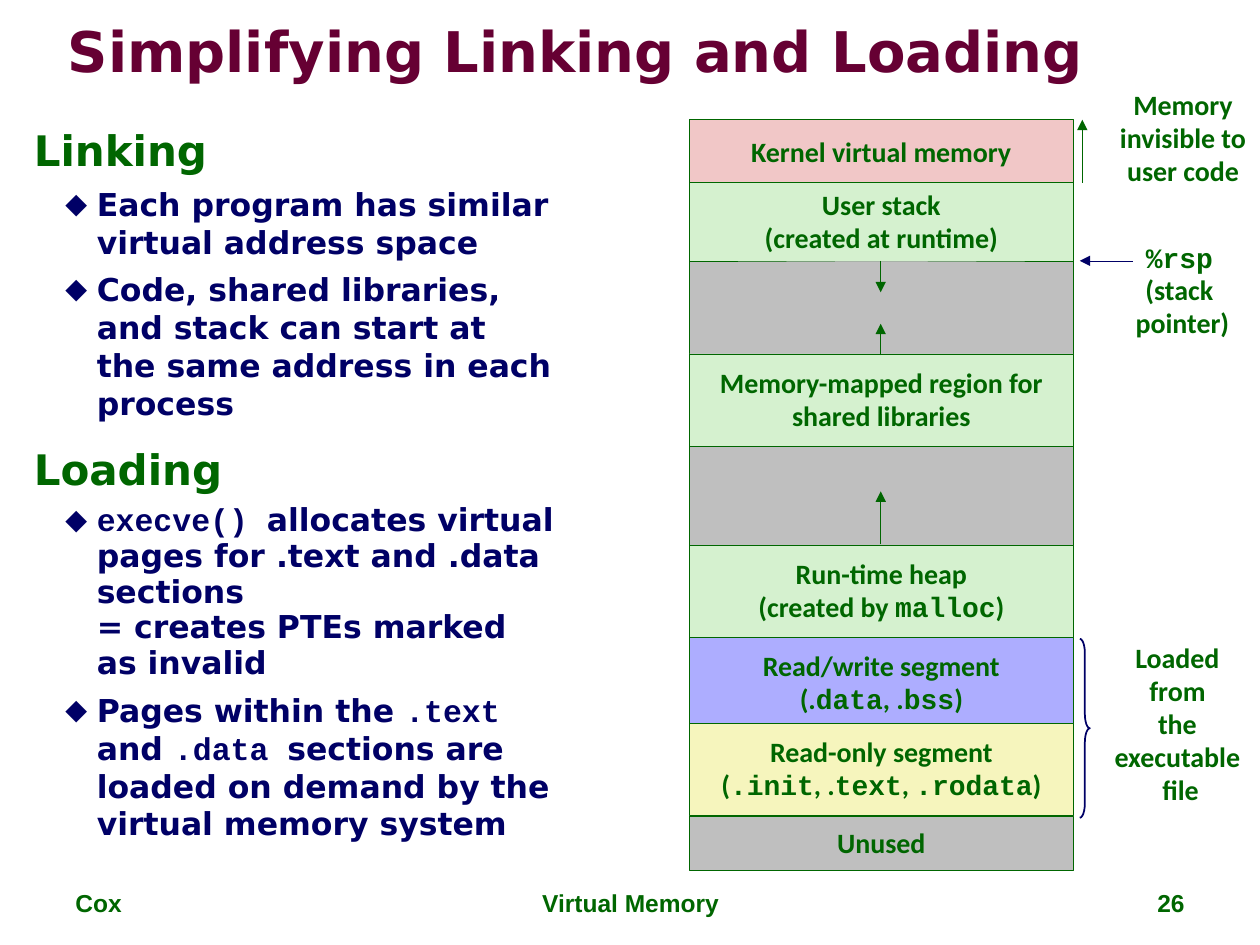
from pptx import Presentation
from pptx.dml.color import RGBColor
from pptx.enum.shapes import MSO_CONNECTOR, MSO_SHAPE
from pptx.enum.text import MSO_ANCHOR, PP_ALIGN
from pptx.oxml.ns import qn
from pptx.util import Inches, Pt
from lxml.etree import SubElement

HUES = {
    "title": "660033", "green": "006600", "navy": "000066",
    "pink": "F1C7C7", "mint": "D5F1CF", "gray": "BFBFBF",
    "blue": "ADADFF", "cream": "F6F5BD",
}
LEFT, WIDE = 5.47, 3.05
MID = 6.99

BLOCKS = [
    (1.82, 0.99, "gray", []),
    (3.54, 0.79, "gray", []),
    (6.48, 0.43, "gray", ["Unused"]),
    (0.95, 0.53, "pink", ["Kernel virtual memory"]),
    (1.45, 0.62, "mint", ["User stack", "(created at runtime)"]),
    (2.81, 0.73, "mint", ["Memory-mapped region for", "shared libraries"]),
    (4.33, 0.73, "mint", ["Run-time heap", "(created by `malloc`)"]),
    (5.06, 0.73, "blue", ["Read/write segment", "(.`data`, .`bss`)"]),
    (5.74, 0.73, "cream",
     ["Read-only segment", "(`.init`, .`text`, `.rodata`)"]),
]
ARROWS = [
    (MID, 4.32, MID, 3.9, "green"),
    (MID, 2.82, MID, 2.57, "green"),
    (MID, 2.07, MID, 2.32, "green"),
    (8.59, 1.45, 8.59, 0.95, "green"),
    (8.99, 2.07, 8.57, 2.07, "navy"),
]
NOTES = [
    (8.76, 0.66, 1.26, 0.9, ["Memory", "invisible to", "user code"]),
    (8.91, 1.88, 0.95, 0.88, ["`%rsp` ", "(stack ", "pointer)"]),
    (8.74, 5.05, 1.26, 1.42,
     ["Loaded ", "from ", "the ", "executable ", "file"]),
]
TOPICS = [
    ("Linking", [
        ("Each program has similar virtual address space", 1),
        ("Code, shared libraries, and stack can start at "
         "the same address in each process", 1),
    ]),
    ("Loading", [
        ("`execve() `allocates virtual pages for .text and .data sections \n"
         "= creates PTEs marked as invalid", 0.94),
        ("Pages within the `.text `and `.data `sections are "
         "loaded on demand by the virtual memory system", 1),
    ]),
]
FOOTER = [
    (0.5, 2.33, "Cox", PP_ALIGN.LEFT),
    (3.42, 3.17, "Virtual Memory", PP_ALIGN.CENTER),
    (7.17, 2.33, "26", PP_ALIGN.RIGHT),
]


def color(name):
    return RGBColor.from_string(HUES[name])


def add_runs(para, text, font, size, hue):
    for part, words in enumerate(text.split("`")):
        for row, line in enumerate(words.split("\n")):
            if row:
                para.add_line_break()
            if line:
                run = para.add_run()
                run.text = line
                run.font.name = "Courier New" if part % 2 else font
                run.font.size = Pt(size)
                run.font.bold = True
                run.font.color.rgb = color(hue)


def next_para(frame):
    first = frame.paragraphs[0]
    return frame.add_paragraph() if first.runs else first


def add_label(frame, lines):
    frame.word_wrap = False
    for line in lines:
        para = next_para(frame)
        para.alignment = PP_ALIGN.CENTER
        para.line_spacing = 0.94 if line.startswith("`") else 0.98
        add_runs(para, line, "Calibri", 16, "green")


def add_frame(slide, x, y, w, h):
    box = slide.shapes.add_textbox(Inches(x), Inches(y), Inches(w), Inches(h))
    box.text_frame.word_wrap = True
    return box.text_frame


def add_block(slide, y, h, hue, lines):
    box = slide.shapes.add_shape(MSO_SHAPE.RECTANGLE, Inches(LEFT), Inches(y),
                                 Inches(WIDE), Inches(h))
    box.shadow.inherit = False
    box.fill.solid()
    box.fill.fore_color.rgb = color(hue)
    box.line.color.rgb = color("green")
    box.line.width = Pt(0.25)
    box.text_frame.vertical_anchor = MSO_ANCHOR.MIDDLE
    add_label(box.text_frame, lines)


def add_arrow(slide, x1, y1, x2, y2, hue):
    line = slide.shapes.add_connector(MSO_CONNECTOR.STRAIGHT, Inches(x1),
                                      Inches(y1), Inches(x2), Inches(y2))
    line.line.color.rgb = color(hue)
    line.line.width = Pt(0.25)
    SubElement(line.line._get_or_add_ln(), qn("a:tailEnd"), type="triangle")
    SubElement(line._element.spPr, qn("a:effectLst"))


def add_brace(slide):
    brace = slide.shapes.add_shape(MSO_SHAPE.RIGHT_BRACE, Inches(8.57),
                                   Inches(5.07), Inches(0.08), Inches(1.42))
    brace.shadow.inherit = False
    brace.adjustments[0] = 1.417
    brace.adjustments[1] = 0.5
    brace.fill.background()
    brace.line.color.rgb = color("navy")
    brace.line.width = Pt(1)


def indent(para, left):
    props = para._p.get_or_add_pPr()
    props.set("marL", str(Inches(left)))
    props.set("indent", str(Inches(-0.25)))
    return props


def add_topic(frame, head, points):
    para = next_para(frame)
    para.space_before = Pt(12.5)
    indent(para, 0.25)
    add_runs(para, head, "DejaVu Sans", 24, "green")
    for text, pitch in points:
        para = frame.add_paragraph()
        para.level = 1
        para.space_before = Pt(5.6)
        para.line_spacing = pitch
        props = indent(para, 0.5)
        SubElement(props, qn("a:buSzPct"), val="90000")
        SubElement(props, qn("a:buFont"), typeface="DejaVu Sans")
        SubElement(props, qn("a:buChar"), char="◆")
        add_runs(para, text, "DejaVu Sans", 18, "navy")


def main():
    deck = Presentation()
    deck.slide_width, deck.slide_height = Inches(10), Inches(7.5)
    slide = deck.slides.add_slide(deck.slide_layouts[6])

    title = add_frame(slide, 0.44, -0.03, 9.06, 0.86)
    title.vertical_anchor = MSO_ANCHOR.MIDDLE
    add_runs(title.paragraphs[0], "Simplifying Linking and Loading",
             "DejaVu Sans", 32, "title")

    body = add_frame(slide, 0.17, 0.94, 4.33, 5.23)
    for head, points in TOPICS:
        add_topic(body, head, points)

    for block in BLOCKS:
        add_block(slide, *block)
    for arrow in ARROWS:
        add_arrow(slide, *arrow)
    add_brace(slide)
    for *place, lines in NOTES:
        add_label(add_frame(slide, *place), lines)

    for x, w, text, align in FOOTER:
        para = add_frame(slide, x, 7, w, 0.35).paragraphs[0]
        para.alignment = align
        add_runs(para, text, "Arial", 14, "green")

    deck.save("out.pptx")


if __name__ == "__main__":
    main()
